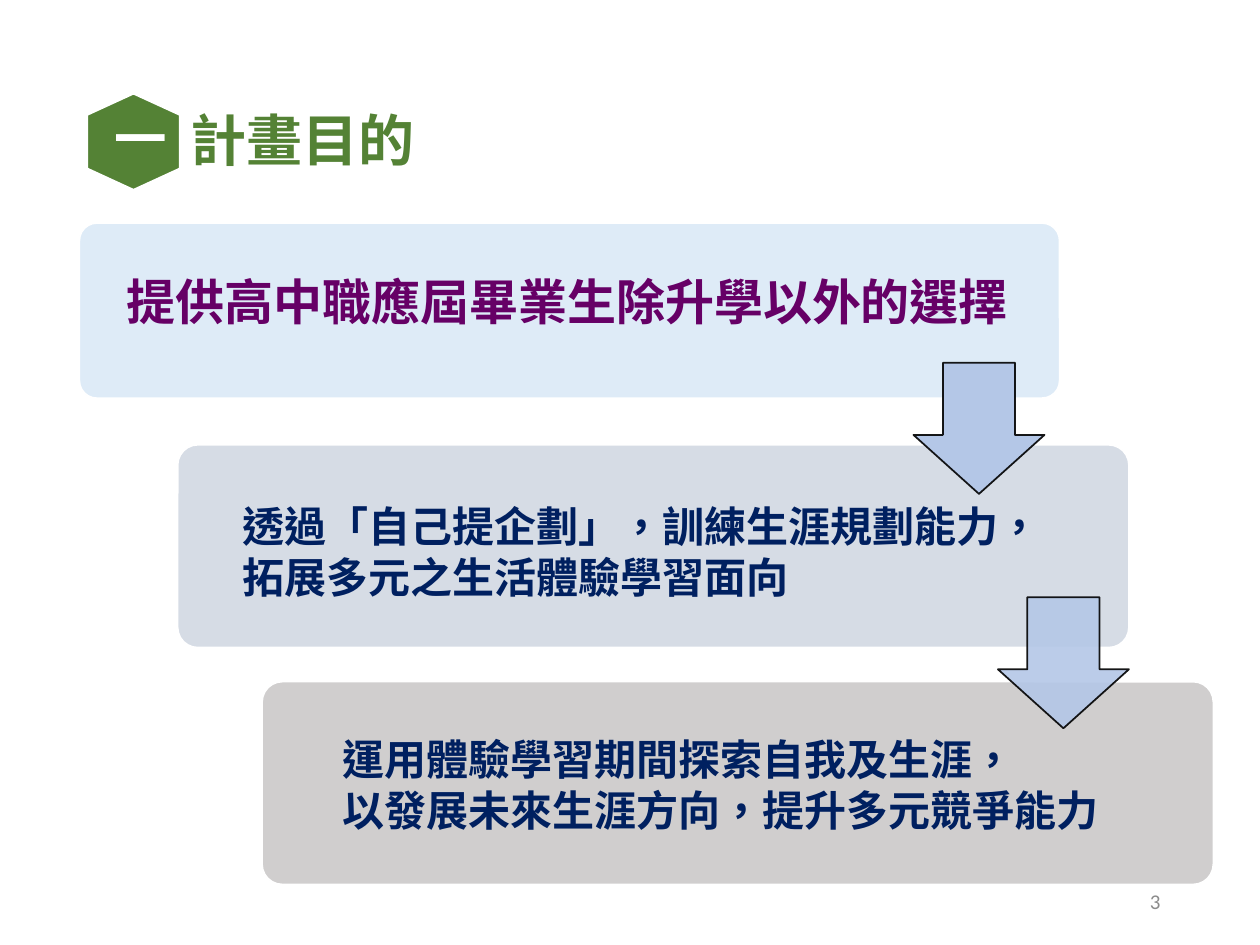
from lxml.etree import SubElement
from pptx import Presentation
from pptx.dml.color import RGBColor
from pptx.enum.lang import MSO_LANGUAGE_ID
from pptx.enum.shapes import MSO_SHAPE
from pptx.enum.text import MSO_ANCHOR, MSO_AUTO_SIZE, PP_ALIGN
from pptx.oxml.ns import qn
from pptx.util import Inches, Pt

CJK = "Noto Sans CJK SC"
GREEN, PURPLE, NAVY, ARROW = "548235", "660066", "002060", "B4C7E7"
TITLE = ("一", "計畫目的")
HEXAGON = [(1.06, 0.74), (1.43, 0.91), (1.43, 1.34), (1.06, 1.51), (0.69, 1.34), (0.69, 0.91)]
STEPS = [
    {"panel": (0.63, 1.77, 7.78, 1.39), "fill": "DEEBF7", "text": (0.91, 2.1, 7.27, 0.88),
     "size": 28, "color": PURPLE, "lines": ["提供高中職應屆畢業生除升學以外的選擇"]},
    {"panel": (1.41, 3.53, 7.55, 1.61), "fill": "D6DCE5", "text": (1.83, 3.92, 6.6, 1.68),
     "size": 24, "color": NAVY,
     "lines": ["透過「自己提企劃」，訓練生涯規劃能力，", "拓展多元之生活體驗學習面向"]},
    {"panel": (2.08, 5.41, 7.55, 1.61), "fill": "D0CECE", "text": (2.62, 5.77, 6.26, 1.68),
     "size": 24, "color": NAVY,
     "lines": ["運用體驗學習期間探索自我及生涯，", "以發展未來生涯方向，提升多元競爭能力"]},
]
ARROWS = [((7.25, 2.88, 1.04, 1.04), 100), ((7.92, 4.74, 1.04, 1.04), 90)]
PAGE_NUMBER = ("3", (7.06, 6.95, 2.25, 0.4))


def rgb(color):
    """Turn a hex string into a colour."""
    return RGBColor.from_string(color)


def set_opacity(color_format, percent):
    """Add opacity to a solid colour."""
    if percent < 100:
        SubElement(color_format.find(qn("a:srgbClr")), qn("a:alpha"), val=str(percent * 1000))


def paint(shape, fill, line, width):
    """Give a shape its fill and outline, without a shadow."""
    shape.shadow.inherit = False
    shape.fill.solid()
    shape.fill.fore_color.rgb = rgb(fill)
    shape.line.color.rgb = rgb(line)
    shape.line.width = Pt(width)


def write(shape, lines, size, color, font=CJK, bold=True, align=PP_ALIGN.LEFT, spacing=None,
          anchor=MSO_ANCHOR.MIDDLE, insets=(0.1, 0.05), wrap=True):
    """Fill the text frame of a shape, one paragraph per line."""
    frame = shape.text_frame
    frame.auto_size = MSO_AUTO_SIZE.NONE
    frame.word_wrap = wrap
    frame.vertical_anchor = anchor
    frame.margin_left = frame.margin_right = Inches(insets[0])
    frame.margin_top = frame.margin_bottom = Inches(insets[1])
    for index, line in enumerate(lines):
        para = frame.add_paragraph() if index else frame.paragraphs[0]
        para.alignment = align
        para.line_spacing = spacing
        span = para.add_run()
        span.text = line
        span.font.size = Pt(size)
        span.font.bold = bold
        span.font.name = font
        span.font.language_id = MSO_LANGUAGE_ID.TRADITIONAL_CHINESE
        span.font.color.rgb = rgb(color)
        SubElement(span.font._element, qn("a:ea"), typeface=font)


def add_heading(page):
    """Draw the numbered hexagon and the title."""
    number, heading = TITLE
    corners = [(Inches(x), Inches(y)) for x, y in HEXAGON]
    builder = page.shapes.build_freeform(*corners[0])
    builder.add_line_segments(corners[1:], close=True)
    hexagon = builder.convert_to_shape()
    paint(hexagon, GREEN, "FFFFFF", 1.5)
    write(hexagon, [number], 30, "FFFFFF", align=PP_ALIGN.CENTER, spacing=0.9, insets=(0.22, 0.24))
    title = page.shapes.title
    title.left, title.top, title.width, title.height = map(Inches, (1.46, 0.79, 3.37, 0.7))
    write(title, [heading], 32, GREEN, spacing=0.9, insets=(0.05, 0.05))


def add_steps(page):
    """Draw the panels, the arrows between them and the wording."""
    for step in STEPS:
        panel = page.shapes.add_shape(MSO_SHAPE.ROUNDED_RECTANGLE, *map(Inches, step["panel"]))
        panel.adjustments[0] = 0.1
        paint(panel, step["fill"], "FFFFFF", 1)
    for place, opacity in ARROWS:
        arrow = page.shapes.add_shape(MSO_SHAPE.DOWN_ARROW, *map(Inches, place))
        arrow.adjustments[0], arrow.adjustments[1] = 0.55, 0.45
        paint(arrow, ARROW, "000000", 1)
        properties = arrow._element.spPr
        set_opacity(properties.find(qn("a:solidFill")), opacity)
        set_opacity(properties.find(qn("a:ln")).find(qn("a:solidFill")), 90)
    for step in STEPS:
        box = page.shapes.add_textbox(*map(Inches, step["text"]))
        write(box, step["lines"], step["size"], step["color"], anchor=MSO_ANCHOR.TOP,
              spacing=Pt(round(step["size"] * 1.21)), wrap=False)


def main():
    """Build and save the slide."""
    deck = Presentation()
    deck.slide_width, deck.slide_height = Inches(10), Inches(7.5)
    page = deck.slides.add_slide(deck.slide_layouts[5])
    add_heading(page)
    add_steps(page)
    number, place = PAGE_NUMBER
    box = page.shapes.add_textbox(*map(Inches, place))
    write(box, [number], 12, "8C8C8C", font="Calibri", bold=False, align=PP_ALIGN.RIGHT)
    deck.save("out.pptx")


if __name__ == "__main__":
    main()
